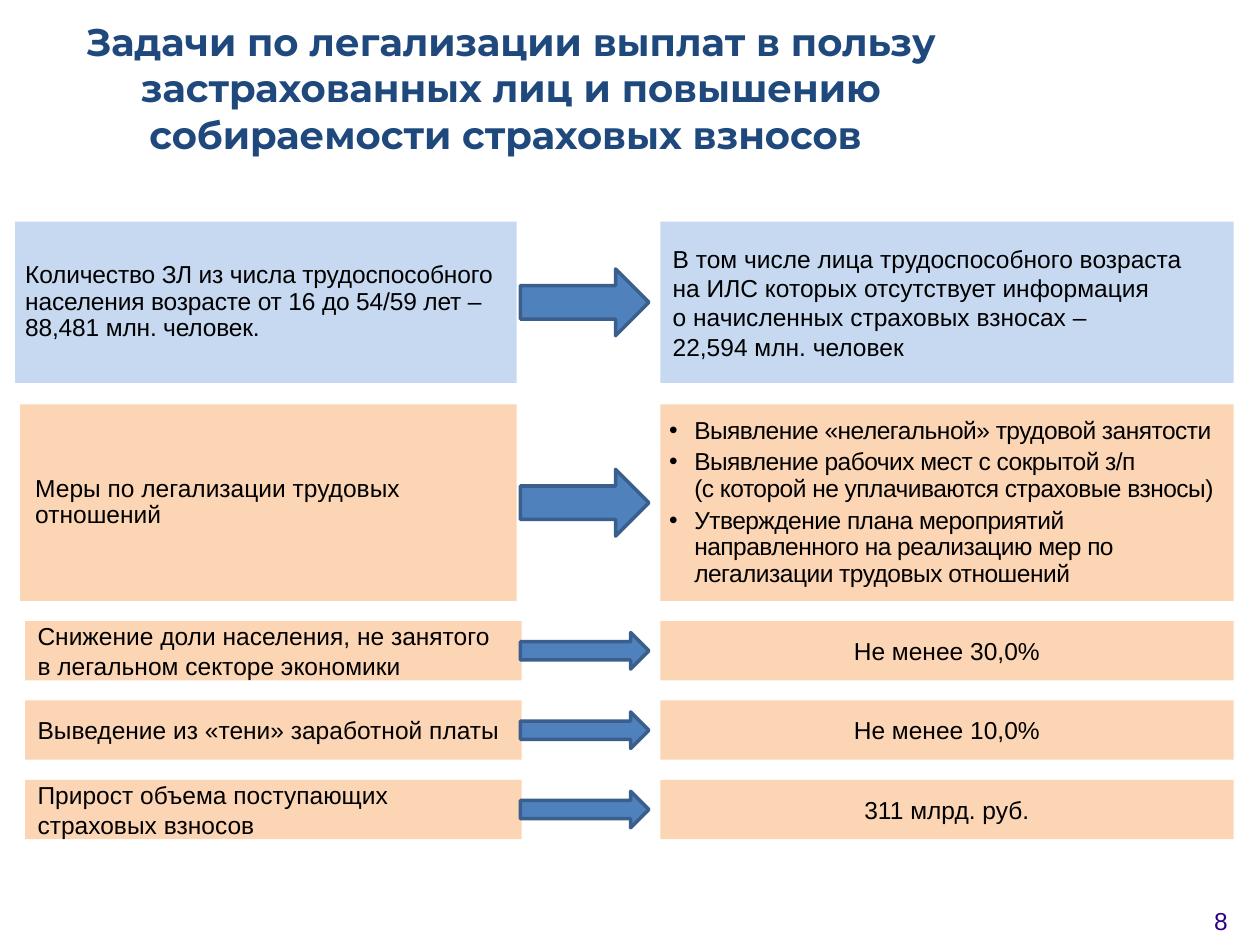
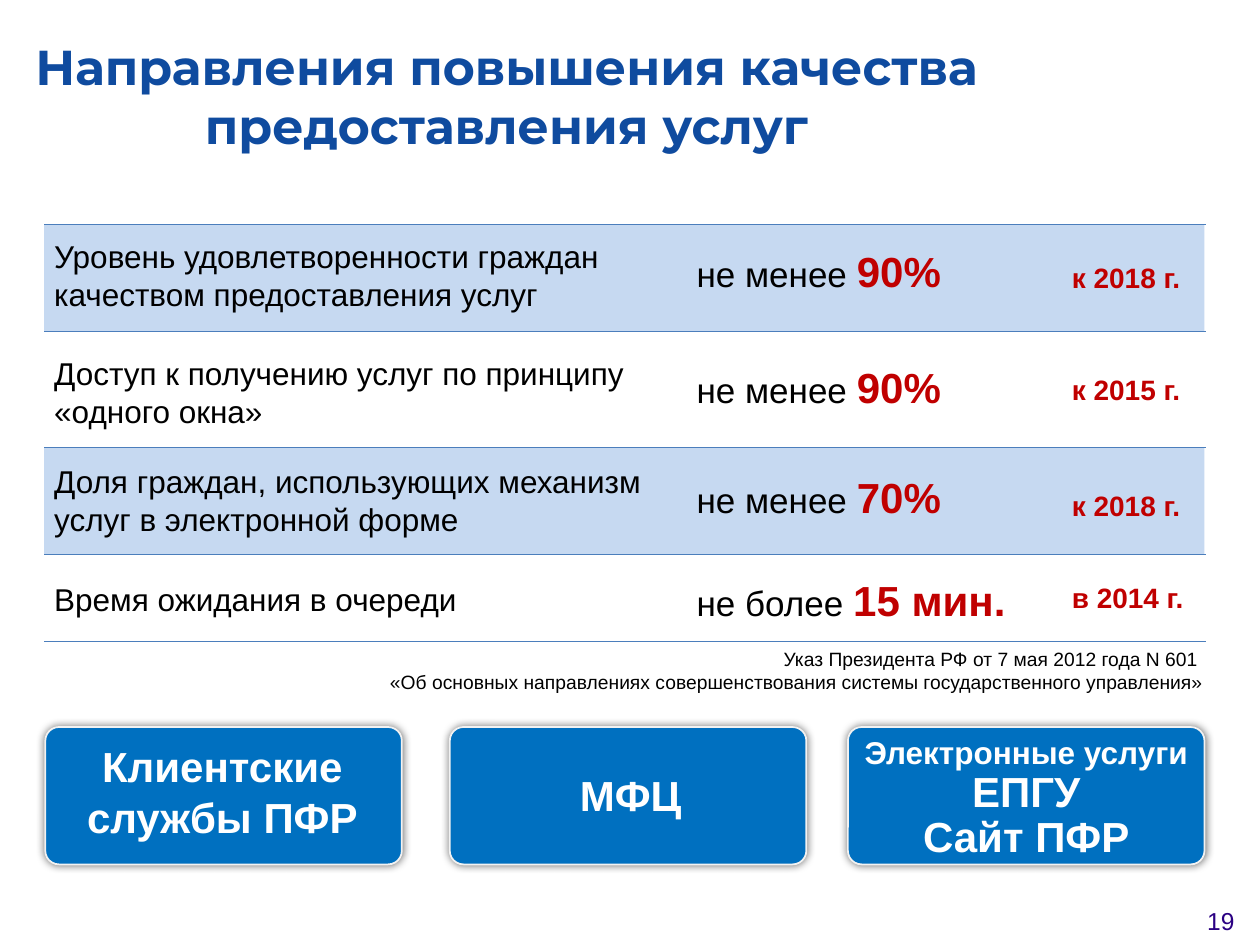
import dataclasses
import typing

import pptx
import pptx.dml.color
import pptx.enum.shapes
import pptx.enum.text
import pptx.oxml
import pptx.oxml.ns
import pptx.slide
import pptx.util

Inches = pptx.util.Inches
Pt = pptx.util.Pt
RGBColor = pptx.dml.color.RGBColor
Align = pptx.enum.text.PP_ALIGN
Anchor = pptx.enum.text.MSO_ANCHOR
Preset = pptx.enum.shapes.MSO_SHAPE

# Shared colours and fonts
NAVY = RGBColor(0x1F, 0x49, 0x7D)
ROYAL = RGBColor(0x0F, 0x4B, 0x9F)
BLACK = RGBColor(0, 0, 0)
WHITE = RGBColor(0xFF, 0xFF, 0xFF)
RED = RGBColor(0xC0, 0, 0)
VIOLET = RGBColor(0x2B, 0, 0x83)
PALE_BLUE = RGBColor(0xC6, 0xD9, 0xF1)
PEACH = RGBColor(0xFC, 0xD5, 0xB5)
ARROW_BLUE = RGBColor(0x4F, 0x81, 0xBD)
ARROW_EDGE = RGBColor(0x3A, 0x5F, 0x8C)
RULE_BLUE = RGBColor(0x4B, 0x7E, 0xBC)
CARD_BLUE = RGBColor(0, 0x70, 0xC0)
CARD_EDGE = RGBColor(0xF2, 0xF2, 0xF2)
BODY_FONT = "Arial"
TITLE_FONT = "Montserrat"


class Box(typing.NamedTuple):
    left: float
    top: float
    width: float
    height: float


@dataclasses.dataclass(frozen=True)
class Run:
    text: str
    size: float = 14
    color: RGBColor = BLACK
    bold: bool = False
    font: str = BODY_FONT
    tracking: float = 0


@dataclasses.dataclass(frozen=True)
class Layout:
    align: Align = Align.LEFT
    anchor: Anchor = Anchor.MIDDLE
    left: float = 0.1
    right: float = 0.1
    top: float = 0.05
    spacing: float = 1.0
    after: float = 0
    bullet: str = ""


@dataclasses.dataclass(frozen=True)
class Panel:
    paragraphs: list[list[Run]]
    layout: Layout = Layout()


@dataclasses.dataclass(frozen=True)
class TaskRow:
    top: float
    height: float
    fill: RGBColor
    left_edge: float
    right_edge: float
    arrow_height: float
    task: Panel
    target: Panel


class Indicator(typing.NamedTuple):
    name: str
    name_top: float
    limit: str
    value: str
    limit_top: float
    term: str
    term_top: float


class Channel(typing.NamedTuple):
    left: float
    label: Box
    spacing: float
    lines: list[tuple[str, float]]


CENTERED = Layout(align=Align.CENTER)
TOP_LEFT = Layout(anchor=Anchor.TOP)


def add_bullet(paragraph, mark: str) -> None:
    properties = paragraph._p.get_or_add_pPr()
    properties.set("marL", str(Inches(0.2)))
    properties.set("indent", str(-Inches(0.2)))
    for element in (f'buFont {{}} typeface="{BODY_FONT}"', f'buChar {{}} char="{mark}"'):
        properties.append(pptx.oxml.parse_xml(
            f'<a:{element.format(pptx.oxml.ns.nsdecls("a"))}/>'))


def write(frame, paragraphs: list[list[Run]], layout: Layout) -> None:
    frame.word_wrap = True
    frame.vertical_anchor = layout.anchor
    frame.margin_left, frame.margin_right = Inches(layout.left), Inches(layout.right)
    frame.margin_top = frame.margin_bottom = Inches(layout.top)
    for index, runs in enumerate(paragraphs):
        paragraph = frame.add_paragraph() if index else frame.paragraphs[0]
        if layout.bullet:
            add_bullet(paragraph, layout.bullet)
        paragraph.alignment = layout.align
        paragraph.line_spacing = layout.spacing
        paragraph.space_after = Pt(layout.after)
        for part in runs:
            for number, line in enumerate(part.text.split("\n")):
                if number:
                    paragraph.add_line_break()
                run = paragraph.add_run()
                run.text = line
                run.font.name = part.font
                run.font.size = Pt(part.size)
                run.font.bold = part.bold
                run.font.color.rgb = part.color
                if part.tracking:
                    run._r.get_or_add_rPr().set("spc", str(round(part.tracking * 100)))


def add_text(slide: pptx.slide.Slide, box: Box, paragraphs: list[list[Run]],
             layout: Layout) -> None:
    write(slide.shapes.add_textbox(*map(Inches, box)).text_frame, paragraphs, layout)


def add_block(slide: pptx.slide.Slide, preset: Preset, box: Box, fill: RGBColor,
              edge: RGBColor | None = None, edge_width: float = 1):
    block = slide.shapes.add_shape(preset, *map(Inches, box))
    block.shadow.inherit = False
    block.fill.solid()
    block.fill.fore_color.rgb = fill
    if edge is None:
        block.line.fill.background()
    else:
        block.line.color.rgb = edge
        block.line.width = Pt(edge_width)
    return block


def start_slide(deck, title: str, title_box: Box, size: float, color: RGBColor,
                number: int) -> pptx.slide.Slide:
    slide = deck.slides.add_slide(deck.slide_layouts[6])
    add_text(slide, title_box, [[Run(title, size, color, True, TITLE_FONT)]], CENTERED)
    add_text(slide, Box(9.41, 7.14, 0.56, 0.36), [[Run(str(number), color=VIOLET)]],
             Layout(Align.CENTER, Anchor.TOP))
    return slide


# Slide 8: tasks on the left, targets on the right
TIGHT = Layout(left=0.08, right=0.12, spacing=0.9, after=3)
MEASURES = ["Выявление «нелегальной» трудовой занятости",
            "Выявление рабочих мест с сокрытой з/п\n"
            "(с которой не уплачиваются страховые взносы)",
            "Утверждение плана мероприятий направленного на реализацию мер по "
            "легализации трудовых отношений"]
GOALS = [("Снижение доли населения, не занятого в легальном секторе экономики",
          "Не менее 30,0%"),
         ("Выведение из «тени» заработной платы", "Не менее 10,0%"),
         ("Прирост объема поступающих страховых взносов", "311 млрд. руб.")]
TASK_ROWS = [
    TaskRow(1.76, 1.28, PALE_BLUE, 0.12, 4.1, 0.53,
            Panel([[Run("Количество ЗЛ из числа трудоспособного населения возрасте "
                        "от 16 до 54/59 лет – 88,481 млн. человек.", tracking=-0.1)]], TIGHT),
            Panel([[Run("В том числе лица трудоспособного возраста\n"
                        "на ИЛС которых отсутствует информация\n"
                        "о начисленных страховых взносах –\n22,594 млн. человек")]])),
    TaskRow(3.21, 1.56, PEACH, 0.16, 4.1, 0.53,
            Panel([[Run("Меры по легализации трудовых отношений")]],
                  dataclasses.replace(TIGHT, left=0.12, right=0.36)),
            Panel([[Run(measure, tracking=-0.3)] for measure in MEASURES],
                  dataclasses.replace(TIGHT, left=0.07, right=0.07, bullet="•"))),
] + [
    TaskRow(4.93 + 0.63 * index, 0.47, PEACH, 0.2, 4.14, 0.29,
            Panel([[Run(goal)]]), Panel([[Run(target)]], CENTERED))
    for index, (goal, target) in enumerate(GOALS)
]


def add_task_row(slide: pptx.slide.Slide, row: TaskRow) -> None:
    task_box = Box(row.left_edge, row.top, row.right_edge - row.left_edge, row.height)
    target_box = Box(5.24, row.top, 4.55, row.height)
    for box, panel in ((task_box, row.task), (target_box, row.target)):
        block = add_block(slide, Preset.RECTANGLE, box, row.fill)
        write(block.text_frame, panel.paragraphs, panel.layout)
    arrow_top = row.top + (row.height - row.arrow_height) / 2
    add_block(slide, Preset.RIGHT_ARROW, Box(4.13, arrow_top, 1.02, row.arrow_height),
              ARROW_BLUE, ARROW_EDGE, 2)


def build_tasks(deck) -> None:
    slide = start_slide(deck, "Задачи по легализации выплат в пользу застрахованных лиц "
                        "и повышению собираемости страховых взносов ",
                        Box(0.2, 0, 7.71, 1.39), 22, NAVY, 8)
    for row in TASK_ROWS:
        add_task_row(slide, row)


# Slide 19: service indicators and service channels
RULE_TOPS = (1.78, 2.63, 3.55, 4.4, 5.09)
INDICATORS = [
    Indicator("Уровень удовлетворенности граждан качеством предоставления услуг", 1.88,
              "не менее ", "90%", 1.9, "к 2018 г.", 2.02),
    Indicator("Доступ к получению услуг по принципу «одного окна»", 2.81,
              "не менее ", "90%", 2.82, "к 2015 г.", 2.91),
    Indicator("Доля граждан, использующих механизм услуг в электронной форме", 3.67,
              "не менее ", "70%", 3.69, "к 2018 г.", 3.83),
    Indicator("Время ожидания в очереди", 4.6,
              "не более ", "15 мин.", 4.51, "в 2014 г.", 4.56),
]
CHANNELS = [
    Channel(0.36, Box(0.35, 5.83, 2.83, 0.91), 1.0, [("Клиентские службы ПФР", 24)]),
    Channel(3.57, Box(3.59, 6.06, 2.83, 0.5), 1.0, [("МФЦ", 24)]),
    Channel(6.73, Box(6.57, 5.8, 3.15, 1.13), 0.9,
            [("Электронные услуги", 18), ("ЕПГУ", 24), ("Сайт ПФР", 24)]),
]


def add_rule(slide: pptx.slide.Slide, top: float) -> None:
    rule = slide.shapes.add_connector(
        pptx.enum.shapes.MSO_CONNECTOR.STRAIGHT,
        Inches(0.35), Inches(top), Inches(9.57), Inches(top))
    rule.line.color.rgb = RULE_BLUE
    rule.line.width = Pt(0.75)
    rule._element.spPr.append(pptx.oxml.parse_xml(
        f'<a:effectLst {pptx.oxml.ns.nsdecls("a")}/>'))


def add_indicators(slide: pptx.slide.Slide) -> None:
    # Every second row is banded
    for top, bottom in list(zip(RULE_TOPS, RULE_TOPS[1:]))[::2]:
        add_block(slide, Preset.RECTANGLE, Box(0.35, top, 9.21, bottom - top), PALE_BLUE)
    for top in RULE_TOPS:
        add_rule(slide, top)
    for row in INDICATORS:
        add_text(slide, Box(0.43, row.name_top, 5.12, 0.61), [[Run(row.name, 18)]],
                 dataclasses.replace(TOP_LEFT, left=0, right=0, top=0))
        add_text(slide, Box(5.43, row.limit_top, 3.11, 0.5),
                 [[Run(row.limit, 20), Run(row.value, 24, RED, True)]], TOP_LEFT)
        add_text(slide, Box(8.41, row.term_top, 1.56, 0.37),
                 [[Run(row.term, 16, RED, True)]], TOP_LEFT)


def add_glow(card) -> None:
    effects = card._element.spPr.find(pptx.oxml.ns.qn("a:effectLst"))
    effects.append(pptx.oxml.parse_xml(
        f'<a:outerShdw {pptx.oxml.ns.nsdecls("a")} blurRad="{Pt(5)}" dist="0">'
        f'<a:srgbClr val="{BLACK}"><a:alpha val="60000"/></a:srgbClr></a:outerShdw>'))


def build_services(deck) -> None:
    slide = start_slide(deck, "Направления повышения качества предоставления услуг",
                        Box(0.12, 0.44, 7.8, 0.63), 28, ROYAL, 19)
    add_indicators(slide)
    decree = ["Указ Президента РФ от 7 мая 2012 года N 601 ",
              "«Об основных направлениях совершенствования системы "
              "государственного управления»"]
    add_text(slide, Box(0.75, 5.09, 8.9, 0.47), [[Run(line, 11)] for line in decree],
             Layout(Align.RIGHT, Anchor.TOP))
    for channel in CHANNELS:
        card = add_block(slide, Preset.ROUNDED_RECTANGLE,
                         Box(channel.left, 5.77, 2.83, 1.09), CARD_BLUE, CARD_EDGE)
        card.adjustments[0] = 0.1
        add_glow(card)
        add_text(slide, channel.label,
                 [[Run(text, size, WHITE, True)] for text, size in channel.lines],
                 Layout(Align.CENTER, Anchor.TOP, spacing=channel.spacing))


def main() -> None:
    deck = pptx.Presentation()
    deck.slide_width, deck.slide_height = Inches(10), Inches(7.5)
    build_tasks(deck)
    build_services(deck)
    deck.save("out.pptx")


if __name__ == "__main__":
    main()
